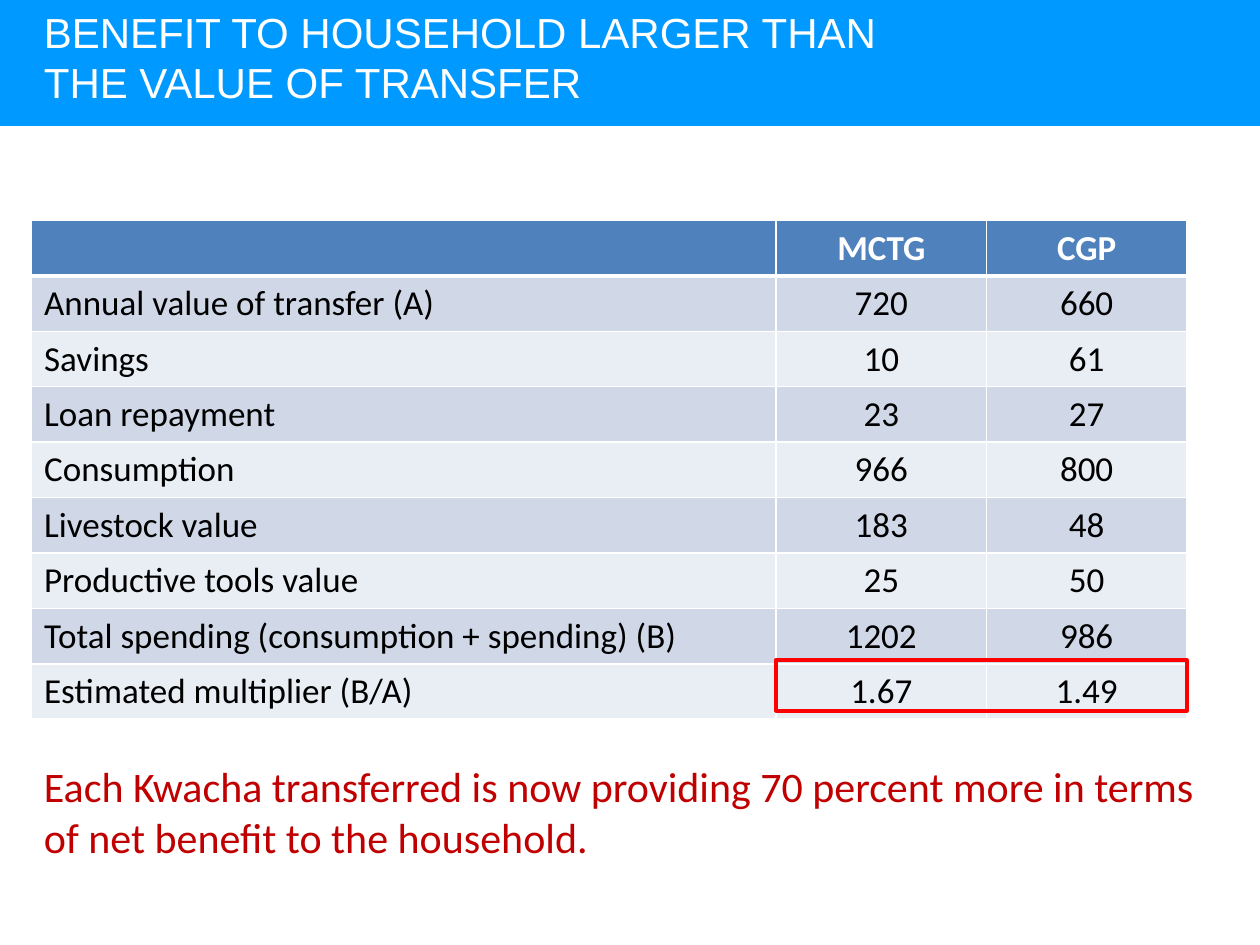
"""Build the slide comparing household spending with the value of the transfer."""
from lxml import etree
from pptx import Presentation
from pptx.dml.color import RGBColor
from pptx.enum.shapes import MSO_SHAPE
from pptx.enum.text import MSO_ANCHOR, PP_ALIGN
from pptx.oxml.ns import qn
from pptx.util import Inches, Pt

RECTANGLE = MSO_SHAPE.RECTANGLE
MIDDLE = MSO_ANCHOR.MIDDLE
CENTER = PP_ALIGN.CENTER
LEFT = PP_ALIGN.LEFT


def color(value):
    return RGBColor.from_string(value)


def format_text(text_frame, font_name, size, value, bold=False, alignment=LEFT):
    for paragraph in text_frame.paragraphs:
        paragraph.alignment = alignment
        for run in paragraph.runs:
            run.font.name = font_name
            run.font.size = Pt(size)
            run.font.bold = bold
            run.font.color.rgb = color(value)


presentation = Presentation()
presentation.slide_width = Inches(10)
presentation.slide_height = Inches(7.5)
slide = presentation.slides.add_slide(presentation.slide_layouts[6])
shapes = slide.shapes

banner = shapes.add_shape(RECTANGLE, Inches(0), Inches(0), Inches(10), Inches(1))
banner.shadow.inherit = False
banner.fill.solid()
banner.fill.fore_color.rgb = color("0099FF")
banner.line.fill.background()

title = shapes.add_textbox(Inches(0.25), Inches(-0.17), Inches(9.21), Inches(1.24))
title.text_frame.word_wrap = True
title.text_frame.vertical_anchor = MIDDLE
title.text_frame.text = "BENEFIT TO HOUSEHOLD LARGER THAN \vTHE VALUE OF TRANSFER"
format_text(title.text_frame, "Arial", 24, "FFFFFF")

rows = [
    ("", "MCTG", "CGP"),
    ("Annual value of transfer (A)", "720", "660"),
    ("Savings", "10", "61"),
    ("Loan repayment", "23", "27"),
    ("Consumption", "966", "800"),
    ("Livestock value", "183", "48"),
    ("Productive tools value", "25", "50"),
    ("Total spending (consumption + spending) (B)", "1202", "986"),
    ("Estimated multiplier (B/A)", "1.67", "1.49"),
]
column_widths = [5.91, 1.67, 1.59]
row_height = 0.44
table = shapes.add_table(
    len(rows), len(column_widths), Inches(0.25), Inches(1.75),
    Inches(sum(column_widths)), Inches(row_height * len(rows)),
).table
for column, width in zip(table.columns, column_widths):
    column.width = Inches(width)

for row_index, values in enumerate(rows):
    table.rows[row_index].height = Inches(row_height)
    is_header = row_index == 0
    fill = "4F81BD" if is_header else ("E9EDF4", "D0D8E8")[row_index % 2]
    border_widths = {
        "lnL": 1,
        "lnR": 1,
        "lnT": 3 if row_index == 1 else 1,
        "lnB": 3 if is_header else 1,
    }
    for column_index, value in enumerate(values):
        cell = table.cell(row_index, column_index)
        cell.text_frame.text = value
        format_text(
            cell.text_frame, "Calibri", 20, "FFFFFF" if is_header else "000000",
            is_header, CENTER if column_index else LEFT,
        )
        properties = cell._tc.get_or_add_tcPr()
        for side, width in border_widths.items():
            border = etree.SubElement(properties, qn(f"a:{side}"), w=str(Pt(width)))
            border_fill = etree.SubElement(border, qn("a:solidFill"))
            etree.SubElement(border_fill, qn("a:srgbClr"), val="FFFFFF")
        cell.fill.solid()
        cell.fill.fore_color.rgb = color(fill)

conclusion = shapes.add_textbox(Inches(0.25), Inches(5.99), Inches(9.42), Inches(1.18))
conclusion.text_frame.word_wrap = True
conclusion.text_frame.text = (
    "Each Kwacha transferred is now providing 70 percent more in terms "
    "of net benefit to the household."
)
format_text(conclusion.text_frame, "Calibri", 24, "C00000")

highlight = shapes.add_shape(
    RECTANGLE, Inches(6.16), Inches(5.24), Inches(3.26), Inches(0.4)
)
highlight.shadow.inherit = False
highlight.fill.background()
highlight.line.color.rgb = color("FF0000")
highlight.line.width = Pt(2.25)

presentation.save("out.pptx")
